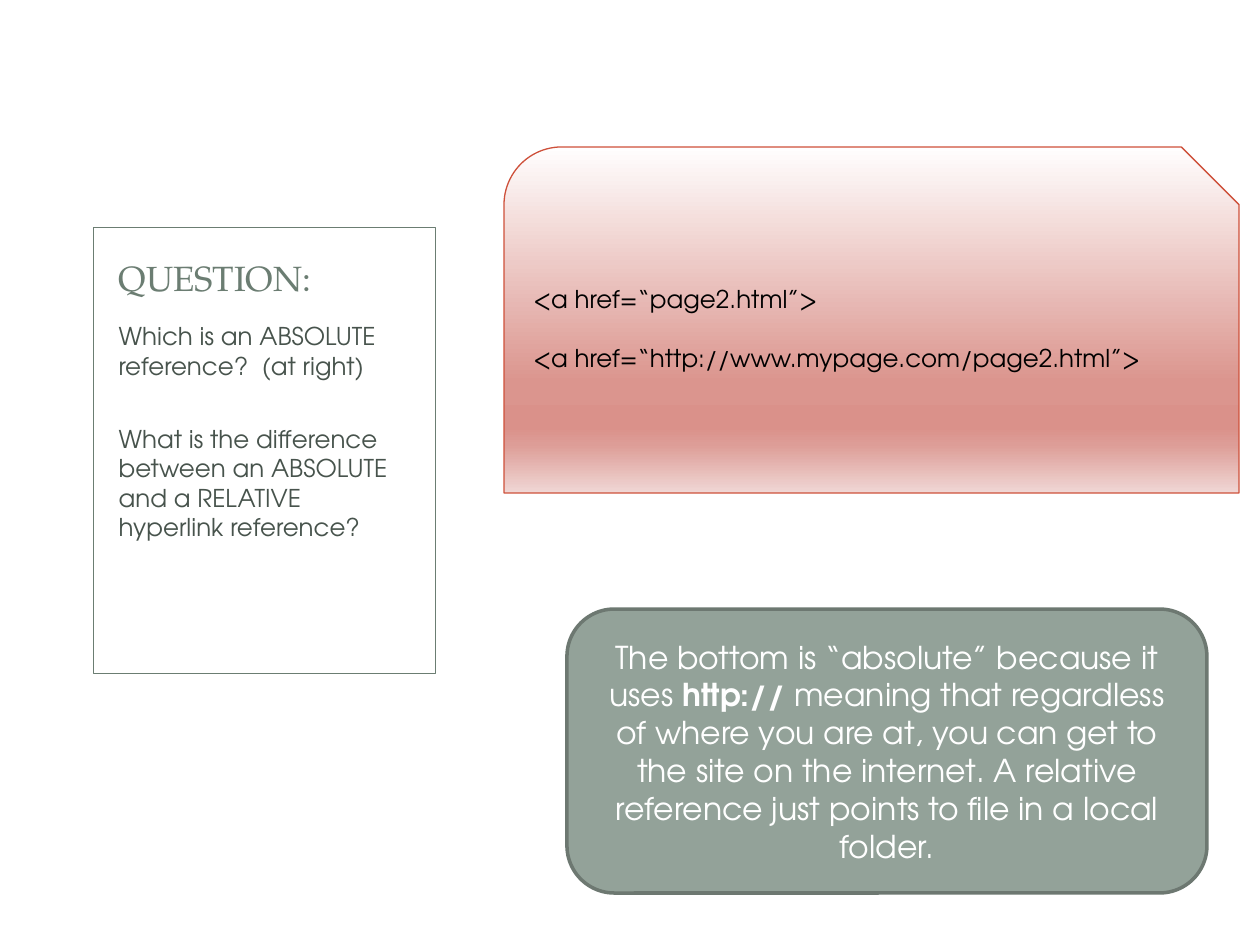
from lxml import etree
from pptx import Presentation
from pptx.dml.color import RGBColor
from pptx.enum.shapes import MSO_SHAPE as SHAPE
from pptx.enum.text import MSO_ANCHOR as ANCHOR, MSO_AUTO_SIZE as AUTO, PP_ALIGN as ALIGN
from pptx.oxml.ns import qn
from pptx.util import Emu, Pt

WHITE = RGBColor(0xFF, 0xFF, 0xFF)
BLACK = RGBColor(0x00, 0x00, 0x00)
SLATE = RGBColor(0x6B, 0x7D, 0x72)
INK = RGBColor(0x47, 0x53, 0x4C)
SAGE = RGBColor(0x93, 0xA2, 0x99)
SAGE_EDGE = RGBColor(0x6D, 0x78, 0x71)
RED = RGBColor(0xCE, 0x50, 0x3A)
BLUSH = [
    (0, RGBColor(0xFF, 0xFE, 0xFE)),
    (68, RGBColor(0xDB, 0x95, 0x8E)),
    (81, RGBColor(0xDA, 0x91, 0x8A)),
    (86, RGBColor(0xDD, 0x9D, 0x97)),
    (100, RGBColor(0xF0, 0xD7, 0xD5)),
]
SANS = "TeX Gyre Adventor"
SERIF = "TeX Gyre Pagella"
PX_PER_INCH = 126


def px(n):
    return Emu(round(n * 914400 / PX_PER_INCH))


def write(tf, paragraphs, size=14, font=SANS, color=INK, align=ALIGN.LEFT,
          anchor=ANCHOR.TOP, before=0, gap=0):
    tf.word_wrap = True
    tf.auto_size = AUTO.NONE
    tf.vertical_anchor = anchor
    for i, runs in enumerate(paragraphs):
        p = tf.add_paragraph() if i else tf.paragraphs[0]
        p.alignment = align
        p.space_before = Pt(gap if i else before)
        for text, bold in runs:
            r = p.add_run()
            r.text = text
            r.font.name, r.font.size, r.font.bold = font, Pt(size), bold
            r.font.color.rgb = color


class Deck:
    def __init__(self, width, height):
        self.prs = Presentation()
        self.prs.slide_width, self.prs.slide_height = px(width), px(height)
        self.s = self.prs.slides.add_slide(self.prs.slide_layouts[7])
        content = self.s.placeholders[1]._element
        content.getparent().remove(content)

    def place(self, sp, box):
        sp.left, sp.top, sp.width, sp.height = map(px, box)

    def placeholder(self, idx, box, paragraphs, **fmt):
        sp = self.s.placeholders[idx]
        self.place(sp, box)
        write(sp.text_frame, paragraphs, **fmt)

    def shape(self, kind, box, fill, line, weight):
        sp = self.s.shapes.add_shape(kind, *map(px, box))
        sp.shadow.inherit = False
        if isinstance(fill, list):
            self.gradient(sp, fill)
        else:
            sp.fill.solid()
            sp.fill.fore_color.rgb = fill
        sp.line.color.rgb = line
        sp.line.width = Pt(weight)
        return sp

    def gradient(self, sp, stops):
        sp.fill.gradient()
        sp.fill.gradient_angle = 270
        gs_list = next(sp._element.iter(qn("a:gsLst")))
        for gs in list(gs_list):
            gs_list.remove(gs)
        for pos, color in stops:
            gs = etree.SubElement(gs_list, qn("a:gs"), pos=str(pos * 1000))
            etree.SubElement(gs, qn("a:srgbClr"), val=str(color))

    def send_to_back(self, sp):
        self.s.shapes._spTree.insert(2, sp._element)

    def save(self):
        self.prs.save("out.pptx")


def main():
    deck = Deck(1260, 945)

    frame = deck.shape(SHAPE.RECTANGLE, (93, 227, 343, 446), WHITE, SLATE, 0.5)
    deck.send_to_back(frame)
    deck.placeholder(2, (106, 315, 316, 347), [
        [("Which is an ABSOLUTE reference?\u00a0 (at right)".replace("\u00a0", " "), False)],
        [("What is the difference between an ABSOLUTE and a RELATIVE hyperlink reference?", False)],
    ], before=4, gap=25)
    deck.placeholder(0, (106, 239, 316, 66), [[("QUESTION:", False)]],
                     size=20, font=SERIF, color=SLATE, anchor=ANCHOR.BOTTOM)

    answer = deck.shape(SHAPE.ROUNDED_RECTANGLE, (567, 609, 640, 284), SAGE, SAGE_EDGE, 2)
    write(answer.text_frame, [[
        ("The bottom is “absolute” because it uses ", False),
        ("http:// ", True),
        ("meaning that regardless of where you are at, you can get to the site on "
         "the internet. A relative reference just points to file in a local folder.", False),
    ]], size=18, color=WHITE, align=ALIGN.CENTER, anchor=ANCHOR.MIDDLE)

    code = deck.shape(SHAPE.SNIP_ROUND_RECTANGLE, (504, 147, 735, 346), BLUSH, RED, 0.75)
    write(code.text_frame, [
        [("<a href=“page2.html”>", False)],
        [("<a href=“http://www.mypage.com/page2.html”>", False)],
    ], color=BLACK, anchor=ANCHOR.MIDDLE, gap=17)

    deck.save()


if __name__ == "__main__":
    main()
